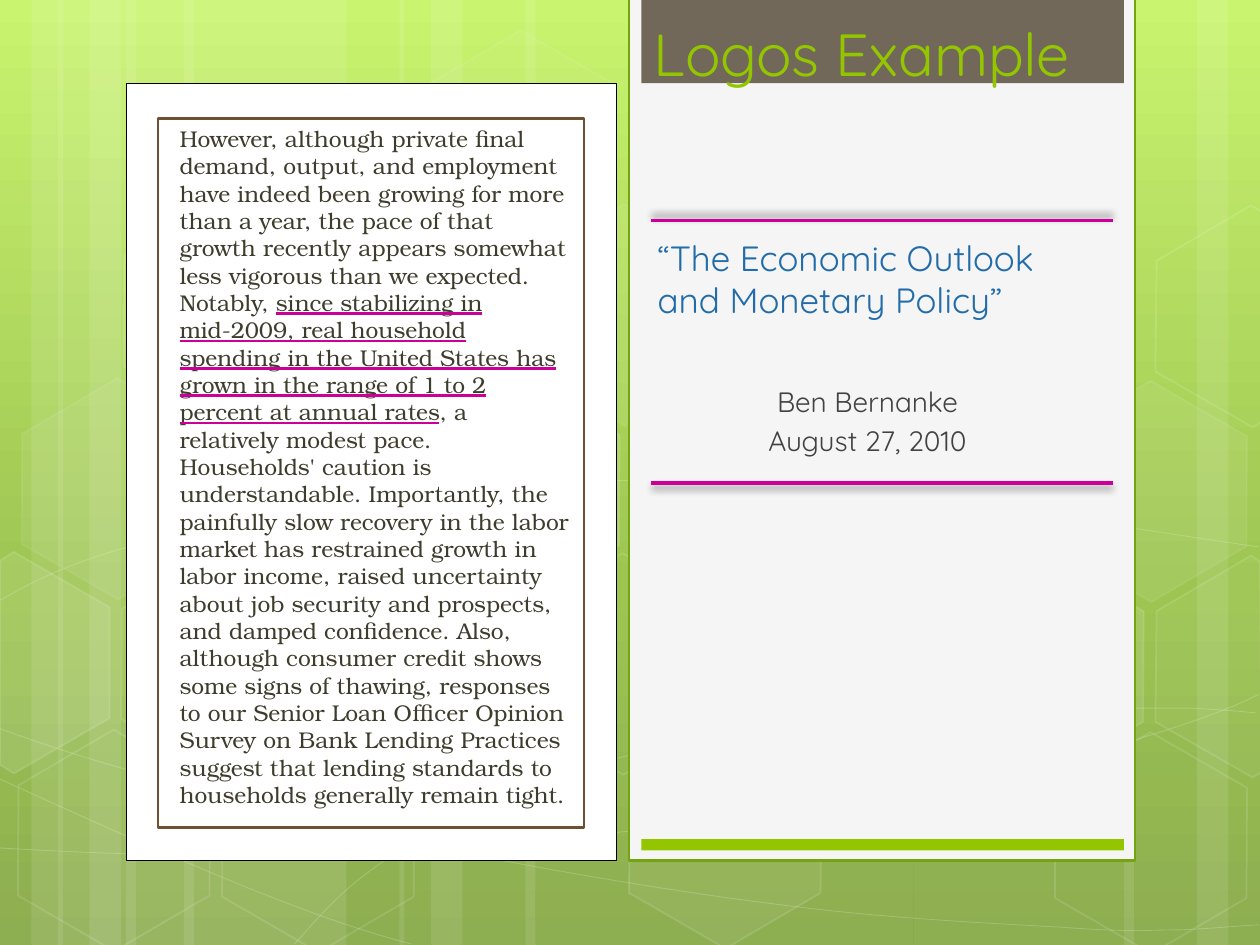
from copy import deepcopy

from lxml import etree
from pptx import Presentation
from pptx import util as u
from pptx.dml.color import RGBColor
from pptx.enum import shapes, text
from pptx.oxml import parse_xml
from pptx.oxml.ns import nsdecls, qn

Inches = u.Inches
WHITE, MAGENTA, GREEN = "FFFFFF", "CC0099", "94C600"
SANS, SERIF = "Quicksand", "TeX Gyre Bonum"


def paint(fill, colour, opacity=100):
    """Make a fill solid, with opacity in percent; no colour means no fill."""
    if colour is None:
        fill.background()
        return
    fill.solid()
    fill.fore_color.rgb = RGBColor.from_string(colour)
    if opacity < 100:
        srgb = fill._xPr.find(".//" + qn("a:srgbClr"))
        etree.SubElement(srgb, qn("a:alpha"), val=str(opacity * 1000))


def style(shape, fill=None, fill_opacity=100, line=None, width=1, line_opacity=100):
    shape.shadow.inherit = False
    paint(shape.fill, fill, fill_opacity)
    paint(shape.line.fill, line, line_opacity)
    if line:
        shape.line.width = u.Pt(width)


deck = Presentation()
deck.slide_width, deck.slide_height = Inches(10), Inches(7.5)
page = deck.slides.add_slide(deck.slide_layouts[6])
canvas = page.shapes

# Background gradient, light at the top
backdrop = page.background.fill
backdrop.gradient()
backdrop.gradient_angle = 270
stop_list = page._element.find(".//" + qn("a:gsLst"))
stop_list.append(deepcopy(stop_list[-1]))
stops = [(0, "C3F35F"), (0.62, "93BF3F"), (1, "81A53E")]
for stop, (position, colour) in zip(backdrop.gradient_stops, stops):
    stop.position = position
    stop.color.rgb = RGBColor.from_string(colour)

# Translucent vertical strips: left, width
strips = [
    (1, 1.75), (0, 0.5), (0.25, 0.83), (1.46, 1.75), (0.46, 0.5), (0.71, 0.83),
    (7.25, 1.75), (9.5, 0.5), (8.92, 0.83), (4.17, 3.08), (3.17, 0.5), (3.42, 0.83),
]
for left, width in strips:
    strip = canvas.add_shape(shapes.MSO_SHAPE.RECTANGLE, Inches(left), 0, Inches(width), Inches(7.5))
    style(strip, WHITE, 10)

# Thin curves: a start point, then cubic segments of three points each
curves = [
    [(-0.01, 6.73), (0.53, 6.76), (1.07, 6.79), (1.82, 6.78), (2.57, 6.77), (3.49, 6.75),
     (4.49, 6.65), (5.5, 6.55), (6.92, 6.36), (7.83, 6.17), (8.75, 5.98), (9.68, 5.68), (9.99, 5.51)],
    [(-0.01, 4.77), (0.27, 4.61), (0.56, 4.46), (1.13, 4.31), (1.7, 4.16), (2.5, 3.94),
     (3.39, 3.87), (4.28, 3.8), (5.35, 3.79), (6.45, 3.87), (7.55, 3.95), (9.39, 4.26), (9.99, 4.34)],
    [(-0.03, 6.17), (1.18, 6.72), (2.39, 7.27), (3.26, 7.49)],
    [(-0.01, 5.78), (0.3, 5.89), (0.61, 6), (1.19, 6.16), (1.78, 6.31), (2.65, 6.56),
     (3.48, 6.73), (4.31, 6.9), (5.37, 7.08), (6.19, 7.18), (7.02, 7.29), (7.91, 7.33),
     (8.44, 7.36), (8.97, 7.4), (9.11, 7.38), (9.36, 7.38), (9.62, 7.37), (9.8, 7.35), (9.99, 7.34)],
    [(2.34, 7.49), (2.52, 7.29), (2.69, 7.09), (2.94, 6.91), (3.18, 6.73), (3.51, 6.53),
     (3.79, 6.39), (4.07, 6.25), (4.24, 6.19), (4.61, 6.09), (4.98, 5.99), (5.65, 5.85),
     (6, 5.78), (6.35, 5.71), (6.4, 5.71), (6.71, 5.69), (7.02, 5.66), (7.51, 5.63),
     (7.86, 5.62), (8.2, 5.61), (8.78, 5.62), (8.78, 5.62), (9, 5.62), (9.22, 5.62),
     (9.44, 5.62), (9.63, 5.63), (9.79, 5.64), (9.88, 5.65), (9.97, 5.66), (9.94, 5.65), (9.97, 5.66)],
]
curve_look = dict(line=WHITE, width=0.5, line_opacity=20)
outlines = [(curve, False, curve_look) for curve in curves]

# Hexagons cut off by the slide edge: points, fill opacity
cut_hexagons = [
    ([(0, 4.45), (0.11, 4.38), (0.87, 4.82), (0.87, 5.7), (0.11, 6.14), (0, 6.07)], 10),
    ([(9.18, 4.85), (9.93, 4.41), (10, 4.46), (10.01, 6.13), (9.94, 6.17), (9.17, 5.73)], 4),
    ([(9.18, 2.07), (9.93, 1.63), (10.01, 1.68), (10.01, 3.35), (9.94, 3.39), (9.17, 2.95)], 0),
]
for points, opacity in cut_hexagons:
    look = dict(fill=WHITE if opacity else None, fill_opacity=opacity, line=WHITE, line_opacity=12)
    outlines.append((points, True, look))

UNITS = 1000  # freeform units per inch
for points, closed, look in outlines:
    units = [(x * UNITS, y * UNITS) for x, y in points]
    builder = canvas.build_freeform(*units[0], scale=Inches(1) / UNITS)
    builder.add_line_segments(units[1:], close=closed)
    outline = builder.convert_to_shape()
    style(outline, **look)
    if not closed:  # turn each three straight segments into one cubic
        segments = list(outline._element.iter(qn("a:lnTo")))
        for first in range(0, len(segments), 3):
            cubic = etree.Element(qn("a:cubicBezTo"))
            segments[first].addprevious(cubic)
            for segment in segments[first:first + 3]:
                cubic.append(segment[0])
                segment.getparent().remove(segment)

# Whole hexagons: left, top, fill opacity, line opacity
hexagons = [
    (3.28, 3.13, 10, 12), (4.07, 4.51, 0, 12), (4.08, 1.74, 7, 8), (3.26, 0.36, 4, 8),
    (4.88, 5.89, 6, 12), (0.03, 5.91, 0, 12), (0.06, 3.12, 7, 8), (0.85, 4.51, 0, 12),
    (1.65, 5.92, 0, 12), (0.87, 1.71, 0, 12), (7.44, 4.53, 10, 12), (8.26, 5.93, 0, 12),
    (8.26, 3.14, 7, 8),
]
for left, top, opacity, line_opacity in hexagons:
    hexagon = canvas.add_shape(
        shapes.MSO_SHAPE.HEXAGON, Inches(left), Inches(top), Inches(1.75), Inches(1.52))
    hexagon.rotation = 30
    hexagon.adjustments[0] = 0.285
    style(hexagon, WHITE if opacity else None, opacity, WHITE, 1, line_opacity)

# Panels: left, top, width, height, fill, line, line width
panels = [
    (4.99, -0.02, 4.02, 6.85, "F5F5F5", "74A510", 1.25),
    (5.09, -0.02, 3.83, 0.68, "71685A", None, 0),
    (1, 0.66, 3.89, 6.17, WHITE, "000000", 0.25),
    (5.09, 6.66, 3.83, 0.09, GREEN, None, 0),
]
for *frame, fill, line, width in panels:
    panel = canvas.add_shape(shapes.MSO_SHAPE.RECTANGLE, *map(Inches, frame))
    style(panel, fill, line=line, width=width)

# Text boxes: each paragraph is a list of spans, every second span underlined
quote = [
    "However, although private final demand, output, and employment have indeed been growing "
    "for more than a year, the pace of that growth recently appears somewhat less vigorous than "
    "we expected. Notably, ",
    "since stabilizing in mid-2009, real household spending in the United States has grown in "
    "the range of 1 to 2 percent at annual rates",
    ", a relatively modest pace. Households' caution is understandable. Importantly, the "
    "painfully slow recovery in the labor market has restrained growth in labor income, raised "
    "uncertainty about job security and prospects, and damped confidence. Also, although consumer "
    "credit shows some signs of thawing, responses to our Senior Loan Officer Opinion Survey on "
    "Bank Lending Practices suggest that lending standards to households generally remain tight.",
]
TOP, BOTTOM = text.MSO_ANCHOR.TOP, text.MSO_ANCHOR.BOTTOM
LEFT, CENTER = text.PP_ALIGN.LEFT, text.PP_ALIGN.CENTER
HEAVY = text.MSO_UNDERLINE.HEAVY_LINE
boxes = [
    ((1.255, 0.94, 3.38, 5.63), TOP, LEFT, 2.6, (13, SERIF, "3E3D2D"), [quote]),
    ((5.12, 1.26, 3.61, 1.33), BOTTOM, LEFT, 0, (20, SANS, "226CAA"),
     [["“The Economic Outlook and Monetary Policy”"]]),
    ((5.08, 3, 3.61, 1.66), TOP, CENTER, 3.2, (16, SANS, "424242"),
     [["Ben Bernanke"], ["August 27, 2010"]]),
    ((5.09, 0, 3.83, 0.75), BOTTOM, LEFT, 0, (34, SANS, GREEN), [["Logos Example"]]),
]
for frame, anchor, align, space, (size, font, colour), paragraphs in boxes:
    box = canvas.add_textbox(*map(Inches, frame))
    body = box.text_frame
    body.word_wrap, body.vertical_anchor = True, anchor
    if paragraphs[0] is quote:
        style(box, line="705032", width=1.5)
        body.margin_left = Inches(0.17)
    for number, spans in enumerate(paragraphs):
        para = body.add_paragraph() if number else body.paragraphs[0]
        for name, value in dict(alignment=align, space_before=u.Pt(space)).items():
            setattr(para, name, value)
        for index, words in enumerate(spans):
            span = para.add_run()
            span.text = words
            underline = HEAVY if index % 2 else None
            for name, value in dict(size=u.Pt(size), name=font, underline=underline).items():
                setattr(span.font, name, value)
            span.font.color.rgb = RGBColor.from_string(colour)
            if underline:
                span._r.rPr.find(qn("a:latin")).addprevious(parse_xml(
                    f'<a:uFill {nsdecls("a")}><a:solidFill><a:srgbClr val="{MAGENTA}"/>'
                    '</a:solidFill></a:uFill>'))

# Rules above and below the speech title, with shadows facing outwards
for y, direction in ((1.75, 270), (3.83, 90)):
    rule = canvas.add_connector(
        shapes.MSO_CONNECTOR.STRAIGHT, Inches(5.17), Inches(y), Inches(8.83), Inches(y))
    paint(rule.line.fill, MAGENTA)
    rule.line.width = u.Pt(2.25)
    rule._element.spPr.append(parse_xml(
        f'<a:effectLst {nsdecls("a")}><a:outerShdw blurRad="{u.Pt(4)}" dist="{u.Pt(3)}" '
        f'dir="{direction * 60000}" rotWithShape="0"><a:srgbClr val="000000">'
        '<a:alpha val="40000"/></a:srgbClr></a:outerShdw></a:effectLst>'))

deck.save("out.pptx")
